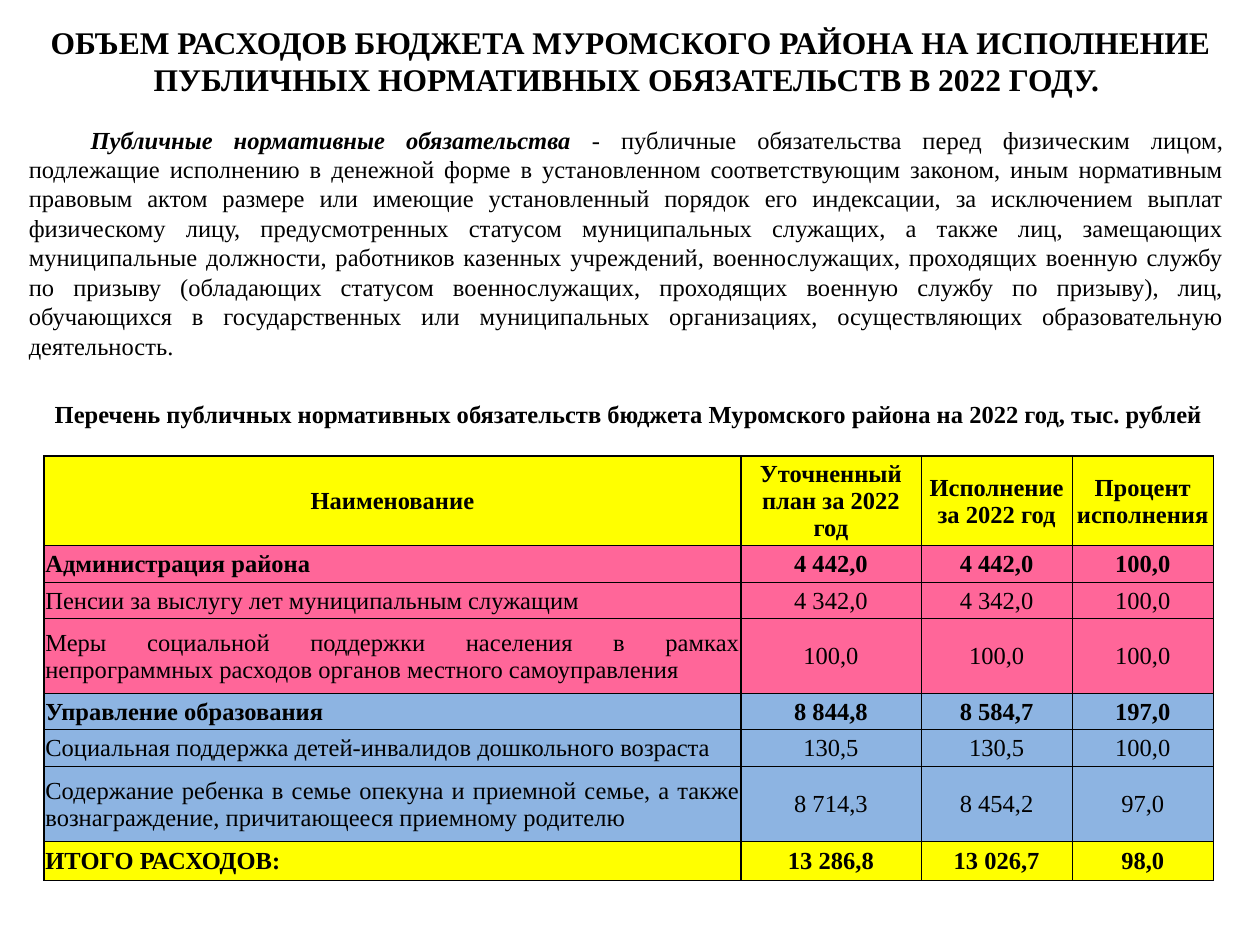
from lxml.etree import SubElement
from pptx import Presentation
from pptx.dml.color import RGBColor
from pptx.enum.text import MSO_ANCHOR, MSO_AUTO_SIZE, PP_ALIGN as Align
from pptx.oxml.ns import qn
from pptx.util import Inches, Pt

BLACK = RGBColor(0x00, 0x00, 0x00)
YELLOW = RGBColor(0xFF, 0xFF, 0x00)
PINK = RGBColor(0xFF, 0x66, 0x99)
BLUE = RGBColor(0x8D, 0xB4, 0xE2)
FONT = "Times New Roman"
THIN, THICK = 0.5, 1

TITLE = (
    "ОБЪЕМ РАСХОДОВ БЮДЖЕТА МУРОМСКОГО РАЙОНА НА ИСПОЛНЕНИЕ "
    "ПУБЛИЧНЫХ НОРМАТИВНЫХ ОБЯЗАТЕЛЬСТВ В 2022 ГОДУ. "
)
TERM = "Публичные нормативные обязательства"
DEFINITION = (
    " - публичные обязательства перед физическим лицом, подлежащие исполнению "
    "в денежной форме в установленном соответствующим законом, иным нормативным "
    "правовым актом размере или имеющие установленный порядок его индексации, "
    "за исключением выплат физическому лицу, предусмотренных статусом "
    "муниципальных служащих, а также лиц, замещающих муниципальные должности, "
    "работников казенных учреждений, военнослужащих, проходящих военную службу "
    "по призыву (обладающих статусом военнослужащих, проходящих военную службу "
    "по призыву), лиц, обучающихся в государственных или муниципальных "
    "организациях, осуществляющих образовательную деятельность."
)
CAPTION = (
    "Перечень публичных нормативных обязательств бюджета "
    "Муромского района на 2022 год, тыс. рублей"
)
COL_WIDTHS = [5.53, 1.43, 1.2, 1.12]
COL_LINES = [THICK, THICK, THIN, THIN, THICK]
ROWS = [
    (0.6, YELLOW, True, ["Наименование", "Уточненный план за 2022 год",
                         "Исполнение за 2022 год", "Процент исполнения"]),
    (0.29, PINK, True, ["Администрация района", "4 442,0", "4 442,0", "100,0"]),
    (0.29, PINK, False, ["Пенсии за выслугу лет муниципальным служащим",
                         "4 342,0", "4 342,0", "100,0"]),
    (0.59, PINK, False, ["Меры социальной поддержки населения в рамках непрограммных "
                         "расходов органов местного самоуправления",
                         "100,0", "100,0", "100,0"]),
    (0.29, BLUE, True, ["Управление образования ", "8 844,8", "8 584,7", "197,0"]),
    (0.29, BLUE, False, ["Социальная поддержка детей-инвалидов дошкольного возраста",
                         "130,5", "130,5", "100,0"]),
    (0.6, BLUE, False, ["Содержание ребенка в семье опекуна и приемной семье, а также "
                        "вознаграждение, причитающееся приемному родителю",
                        "8 714,3", "8 454,2", "97,0"]),
    (0.31, YELLOW, True, ["ИТОГО РАСХОДОВ:", "13 286,8", "13 026,7", "98,0"]),
]
ROW_LINES = [THICK, THICK, THIN, THIN, THIN, THIN, THIN, THICK, THICK]
CAPTION_HEIGHT = 0.66


def add_run(p, text, size=14, bold=False, italic=False):
    """Append a formatted run to a paragraph."""
    r = p.add_run()
    r.text = text
    font = r.font
    font.name, font.size = FONT, Pt(size)
    font.bold, font.italic = bold, italic
    font.color.rgb = BLACK


def add_text_box(slide, left, top, width, height, align):
    """Add a wrapping text box and return its first paragraph."""
    sp = slide.shapes.add_textbox(*map(Inches, (left, top, width, height)))
    tf = sp.text_frame
    tf.word_wrap = True
    tf.auto_size = MSO_AUTO_SIZE.SHAPE_TO_FIT_TEXT
    p = tf.paragraphs[0]
    p.alignment = align
    return p


def set_borders(cell, **widths):
    """Draw solid black cell borders, given by side in drawing order."""
    props = cell._tc.get_or_add_tcPr()
    for side, width in widths.items():
        line = SubElement(props, qn(f"a:ln{side}"), w=str(Pt(width)))
        fill = SubElement(line, qn("a:solidFill"))
        SubElement(fill, qn("a:srgbClr"), val=str(BLACK))


def fill_cell(cell, text, bold, align, color=None):
    """Write a cell's text and set its margins and fill."""
    cell.margin_left = cell.margin_top = cell.margin_right = Inches(0.01)
    cell.margin_bottom = 0
    cell.vertical_anchor = MSO_ANCHOR.MIDDLE
    p = cell.text_frame.paragraphs[0]
    p.alignment = align
    add_run(p, text, bold=bold)
    if color is None:
        cell.fill.background()
    else:
        cell.fill.solid()
        cell.fill.fore_color.rgb = color


def add_obligations_table(slide, left, top):
    """Add the table of obligations with its merged caption row."""
    heights = [CAPTION_HEIGHT] + [row[0] for row in ROWS]
    frame = slide.shapes.add_table(
        len(heights), len(COL_WIDTHS), Inches(left), Inches(top),
        Inches(sum(COL_WIDTHS)), Inches(sum(heights)))
    table = frame.table
    table.first_row = table.horz_banding = False
    for column, width in zip(table.columns, COL_WIDTHS):
        column.width = Inches(width)
    for row, height in zip(table.rows, heights):
        row.height = Inches(height)

    caption = table.cell(0, 0)
    caption.merge(table.cell(0, len(COL_WIDTHS) - 1))
    set_borders(caption, B=THICK)
    fill_cell(caption, CAPTION, True, Align.CENTER)

    for i, (_, color, bold, texts) in enumerate(ROWS):
        for j, text in enumerate(texts):
            cell = table.cell(i + 1, j)
            set_borders(cell, L=COL_LINES[j], R=COL_LINES[j + 1],
                        T=ROW_LINES[i], B=ROW_LINES[i + 1])
            align = Align.JUSTIFY if i and j == 0 else Align.CENTER
            fill_cell(cell, text, bold, align, color)


def main():
    """Build the slide and save it."""
    prs = Presentation()
    prs.slide_width, prs.slide_height = Inches(10), Inches(7.5)
    s = prs.slides.add_slide(prs.slide_layouts[6])

    p = add_text_box(s, 0.28, 0.13, 9.45, 0.71, Align.CENTER)
    add_run(p, TITLE, size=18, bold=True)

    p = add_text_box(s, 0.13, 0.94, 9.68, 1.99, Align.JUSTIFY)
    p._p.get_or_add_pPr().set("indent", str(Inches(0.49)))
    add_run(p, TERM, bold=True, italic=True)
    add_run(p, DEFINITION)

    add_obligations_table(s, 0.35, 2.96)
    prs.save("out.pptx")


if __name__ == "__main__":
    main()
